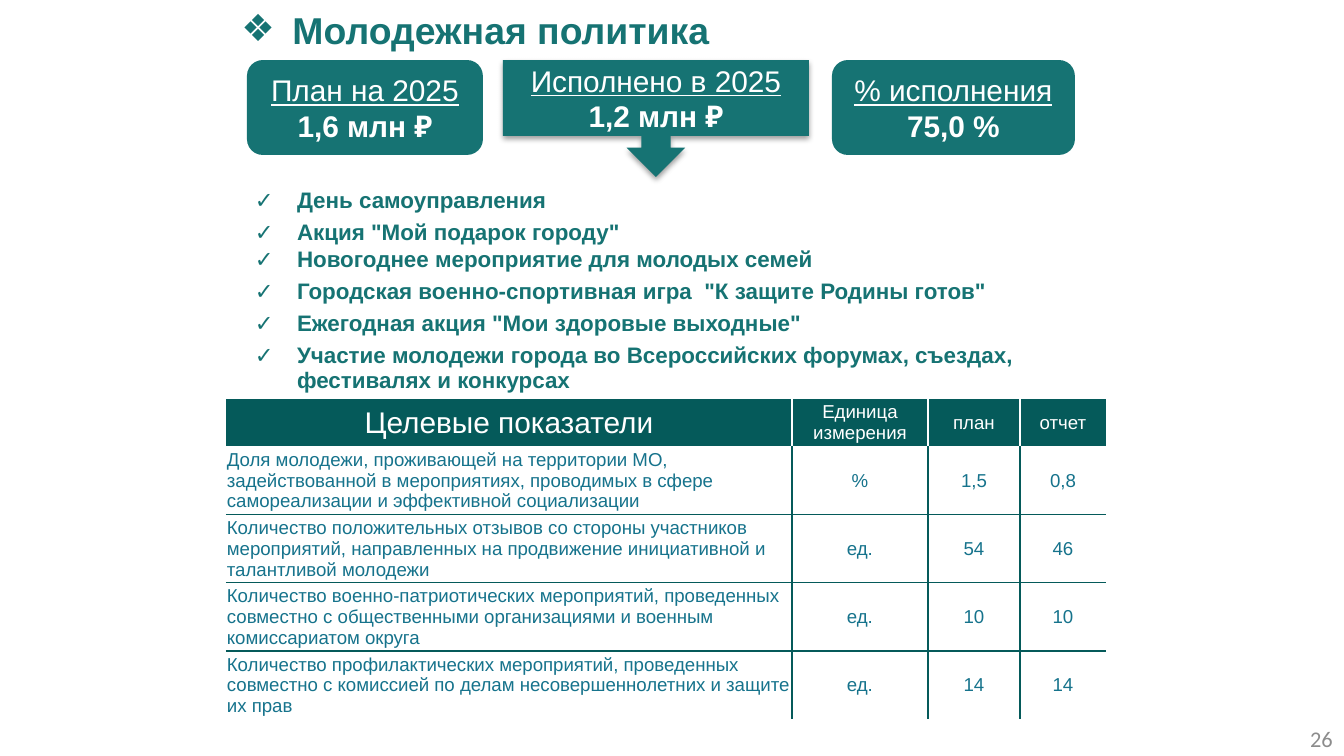
from dataclasses import dataclass

from pptx import Presentation
from pptx.dml.color import RGBColor
from pptx.enum.shapes import MSO_SHAPE
from pptx.enum.text import MSO_ANCHOR, MSO_AUTO_SIZE, PP_ALIGN
from pptx.oxml.ns import qn
from pptx.util import Pt
from lxml import etree

SCALE = 9144000 / 1344
LEFT, CENTER, RIGHT = PP_ALIGN.LEFT, PP_ALIGN.CENTER, PP_ALIGN.RIGHT
TOP, MIDDLE = MSO_ANCHOR.TOP, MSO_ANCHOR.MIDDLE
ROUNDED = MSO_SHAPE.ROUNDED_RECTANGLE
CALLOUT = MSO_SHAPE.DOWN_ARROW_CALLOUT


@dataclass(frozen=True)
class Theme:
    teal: str = "167373"
    dark: str = "055A5A"
    blue: str = "16738C"
    white: str = "FFFFFF"
    gray: str = "8C8C8C"
    black: str = "000000"
    font: str = "Arial"
    number_font: str = "Calibri"
    title: int = 20
    large: int = 16
    medium: int = 12
    small: int = 10


THEME = Theme()

CARDS = [
    (CALLOUT, 503, 306, 117, "Исполнено в 2025", "1,2 млн ₽"),
    (ROUNDED, 247, 236, 95, "План на 2025", "1,6 млн ₽"),
    (ROUNDED, 832, 243, 95, "% исполнения", "75,0 %"),
]
EVENTS = [
    (32, "День самоуправления"),
    (27, 'Акция "Мой подарок городу"'),
    (32, "Новогоднее мероприятие для молодых семей"),
    (32, 'Городская военно-спортивная игра  "К защите Родины готов"'),
    (32, 'Ежегодная акция "Мои здоровые выходные"'),
    (55, "Участие молодежи города во Всероссийских форумах, съездах, фестивалях и конкурсах"),
]
INDICATORS = [
    ("Целевые показатели", "Единица измерения", "план", "отчет"),
    ("Доля молодежи, проживающей на территории МО, задействованной в мероприятиях, "
     "проводимых в сфере самореализации и эффективной социализации", "%", "1,5", "0,8"),
    ("Количество положительных отзывов со стороны участников мероприятий, направленных "
     "на продвижение инициативной и талантливой молодежи", "ед.", "54", "46"),
    ("Количество военно-патриотических мероприятий, проведенных совместно с общественными "
     "организациями и военным комиссариатом округа", "ед.", "10", "10"),
    ("Количество профилактических мероприятий, проведенных совместно с комиссией по делам "
     "несовершеннолетних и защите их прав", "ед.", "14", "14"),
]


def px(length):
    return round(length * SCALE)


def box(*lengths):
    return [px(length) for length in lengths]


def add_element(parent, tag, **attributes):
    element = etree.SubElement(parent, qn(tag))
    for name, value in attributes.items():
        element.set(name, str(value))
    return element


def write_text(paragraph, text, size=THEME.medium, color=THEME.teal, font=THEME.font,
               bold=False, underline=False, align=LEFT, bullet=None, indent=0):
    paragraph.alignment = align
    if bullet:
        properties = paragraph._p.get_or_add_pPr()
        properties.set("marL", str(px(indent)))
        properties.set("indent", str(-px(indent)))
        add_element(properties, "a:buFont", typeface=font)
        add_element(properties, "a:buChar", char=bullet)
    run = paragraph.add_run()
    run.text = text
    run.font.size = Pt(size)
    run.font.name = font
    run.font.bold = bold
    run.font.underline = underline
    run.font.color.rgb = RGBColor.from_string(color)


def add_title(slide, text):
    title = slide.shapes.title
    title.left, title.top, title.width, title.height = box(228, 0, 499, 59)
    frame = title.text_frame
    frame.word_wrap = False
    frame.auto_size = MSO_AUTO_SIZE.SHAPE_TO_FIT_TEXT
    frame.vertical_anchor = TOP
    write_text(frame.paragraphs[0], text, size=THEME.title, bold=True, bullet="❖", indent=51)


def add_slide_number(slide, text):
    frame = slide.shapes.add_textbox(*box(1033, 719, 313, 40)).text_frame
    frame.word_wrap = True
    frame.vertical_anchor = MIDDLE
    write_text(frame.paragraphs[0], text, color=THEME.gray, font=THEME.number_font, align=RIGHT)


def add_shadow(shape):
    shadow = add_element(shape._element.spPr.find(qn("a:effectLst")), "a:outerShdw",
                         blurRad=Pt(3.1), dist=Pt(1.6), dir=5400000, rotWithShape=0)
    color = add_element(shadow, "a:srgbClr", val=THEME.black)
    add_element(color, "a:alpha", val=38000)


def add_card(slide, kind, left, width, height, label, value):
    card = slide.shapes.add_shape(kind, *box(left, 60, width, height))
    card.shadow.inherit = False
    card.fill.solid()
    card.fill.fore_color.rgb = RGBColor.from_string(THEME.teal)
    card.line.fill.background()
    if kind == CALLOUT:
        add_shadow(card)
    frame = card.text_frame
    frame.word_wrap = True
    frame.vertical_anchor = MIDDLE
    style = {"size": THEME.large, "color": THEME.white, "align": CENTER}
    write_text(frame.paragraphs[0], label, underline=True, **style)
    write_text(frame.add_paragraph(), value, bold=True, **style)


def add_table(slide, left, top, widths, heights):
    frame = slide.shapes.add_table(len(heights), len(widths),
                                   *box(left, top, sum(widths), sum(heights)))
    table = frame.table
    table.first_row = False
    table.horz_banding = False
    for column, width in zip(table.columns, widths):
        column.width = px(width)
    for row, height in zip(table.rows, heights):
        row.height = px(height)
    return table


def format_cell(cell, side, top, anchor, borders, fill=None):
    cell.margin_left = cell.margin_right = px(side)
    cell.margin_top, cell.margin_bottom = px(top), 0
    cell.vertical_anchor = anchor
    properties = cell._tc.get_or_add_tcPr()
    for edge in "LRTB":
        line = add_element(properties, f"a:ln{edge}", w=Pt(1))
        if edge in borders:
            add_element(add_element(line, "a:solidFill"), "a:srgbClr", val=borders[edge])
        else:
            add_element(line, "a:noFill")
    if fill:
        cell.fill.solid()
        cell.fill.fore_color.rgb = RGBColor.from_string(fill)
    else:
        cell.fill.background()


def add_events(slide):
    table = add_table(slide, 247, 188, [836], [height for height, text in EVENTS])
    for index, (height, text) in enumerate(EVENTS):
        cell = table.cell(index, 0)
        format_cell(cell, side=8, top=0, anchor=TOP, borders={})
        write_text(cell.text_frame.paragraphs[0], text, bold=True, bullet="✓", indent=42)


def add_indicators(slide):
    widths = [566, 136, 92, 86]
    last_row, last_column = len(INDICATORS) - 1, len(widths) - 1
    table = add_table(slide, 226, 399, widths, [47] + [68] * last_row)
    for row, values in enumerate(INDICATORS):
        header = row == 0
        line_color = THEME.white if header else THEME.dark
        for column, text in enumerate(values):
            inner = {"L": column > 0, "R": column < last_column,
                     "T": row > 1, "B": 0 < row < last_row}
            borders = {edge: line_color for edge, shown in inner.items() if shown}
            cell = table.cell(row, column)
            format_cell(cell, side=1, top=1, anchor=MIDDLE, borders=borders,
                        fill=THEME.dark if header else None)
            write_text(cell.text_frame.paragraphs[0], text,
                       size=THEME.large if header and column == 0 else THEME.small,
                       color=THEME.white if header else THEME.blue,
                       align=CENTER if header or column else LEFT)


def main():
    presentation = Presentation()
    presentation.slide_width, presentation.slide_height = box(1344, 756)
    slide = presentation.slides.add_slide(presentation.slide_layouts[5])
    add_slide_number(slide, "26")
    add_title(slide, "Молодежная политика")
    add_events(slide)
    for card in CARDS:
        add_card(slide, *card)
    add_indicators(slide)
    presentation.save("out.pptx")


if __name__ == "__main__":
    main()
